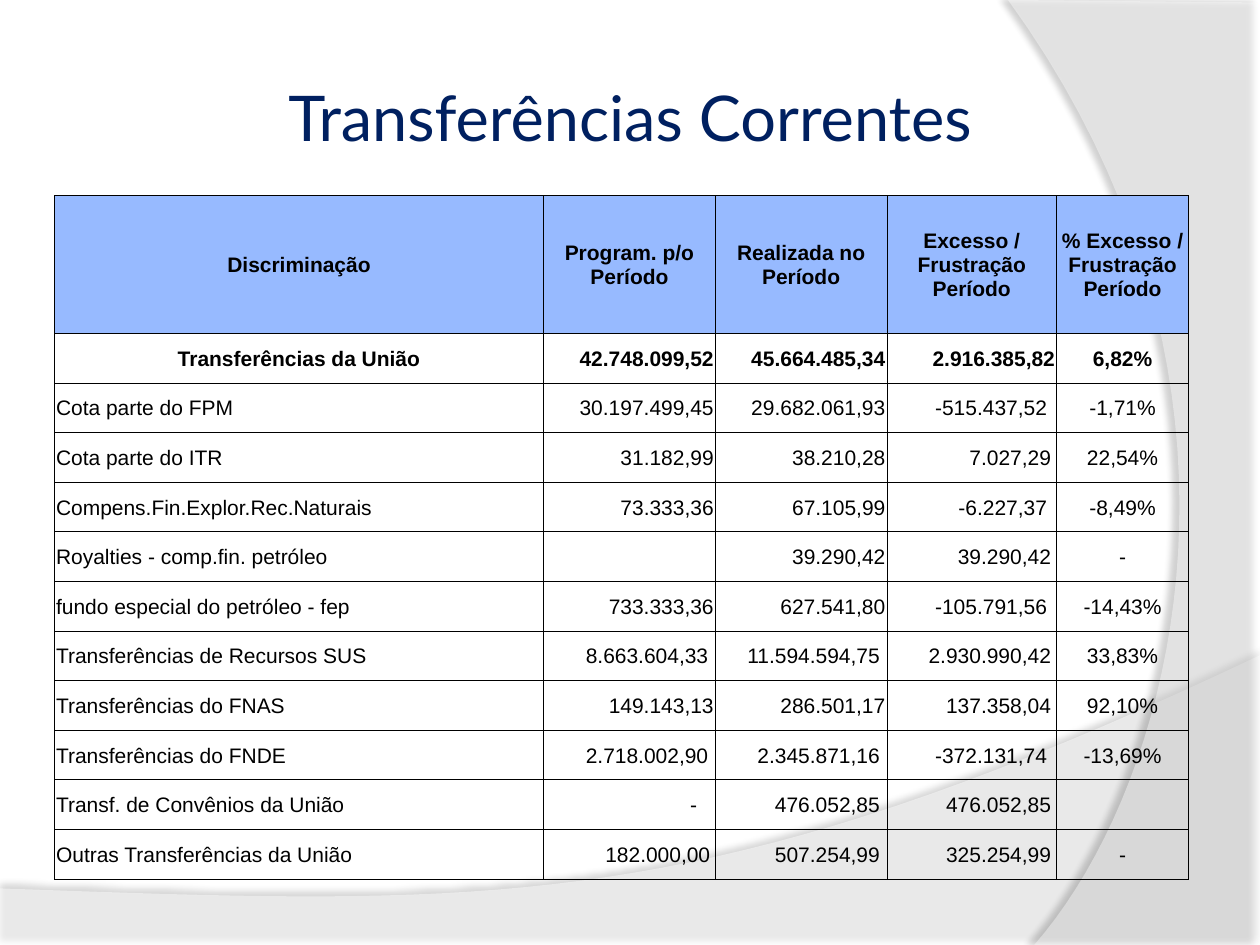
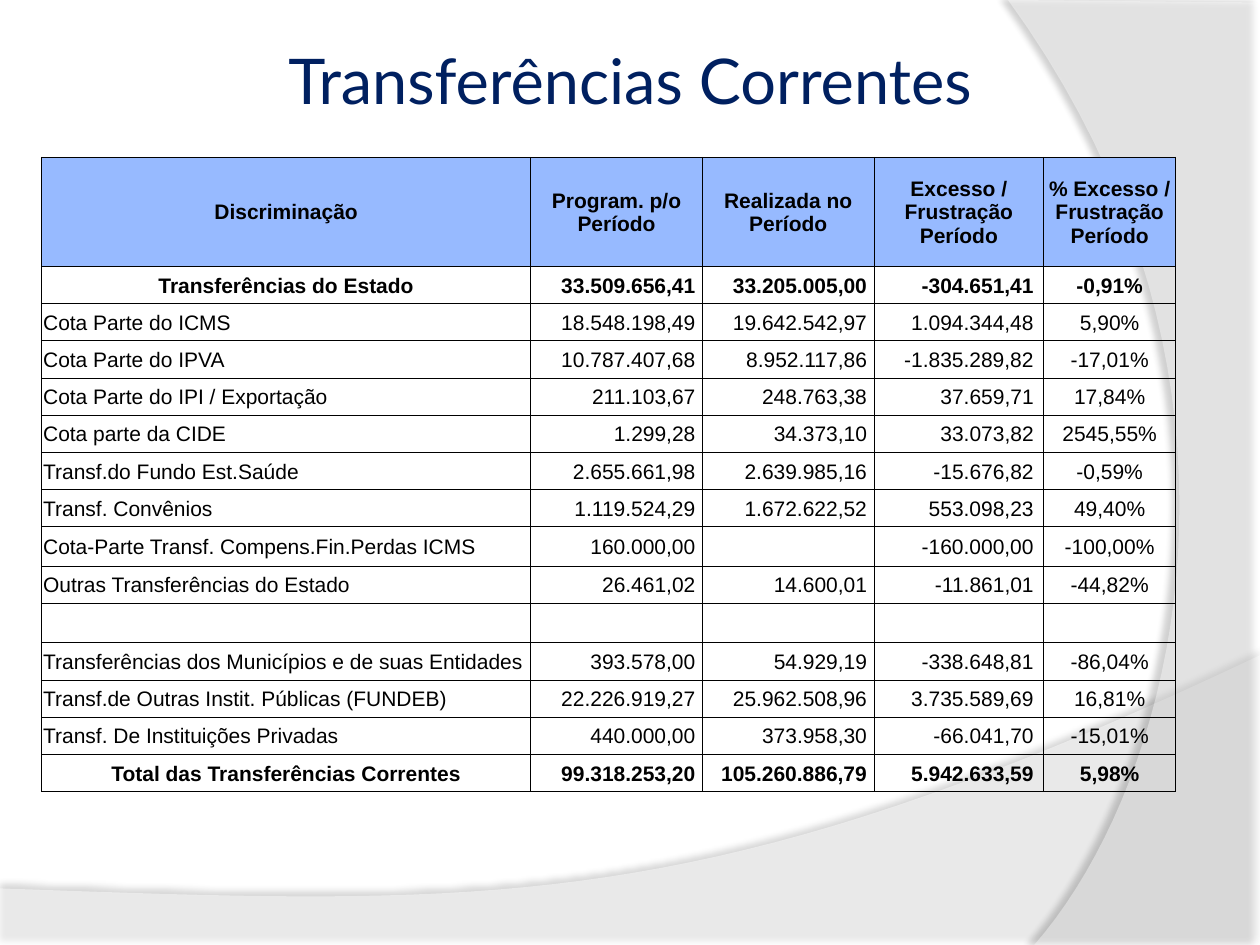
from dataclasses import dataclass

from lxml import etree
from pptx import Presentation
from pptx import util as u
from pptx.dml import color as dml
from pptx.enum import text as txt
from pptx.oxml import ns


@dataclass(frozen=True)
class Theme:
    title: str = "002060"
    ink: str = "000000"
    header: str = "97BAFF"
    paper: str = "FFFFFF"
    title_font: str = "Lato"
    table_font: str = "Arial"
    title_size: int = 36
    table_size: int = 12
    border: float = 0.5


THEME = Theme()
LEFT, CENTER, RIGHT = txt.PP_ALIGN.LEFT, txt.PP_ALIGN.CENTER, txt.PP_ALIGN.RIGHT

TITLE = "Transferências Correntes"
HEADINGS = ("Discriminação", "Program. p/o Período", "Realizada no Período",
            "Excesso / Frustração Período", "% Excesso / Frustração Período")
COLUMN_WIDTHS = (9.86, 3.46, 3.46, 3.42, 2.66)
CELL_INSET = 0.03

# Right insets (cm) of the three amount columns
FLUSH = (0.03, 0.03, 0.03)
EDGE = (0.03, 0.03, 0.11)
EDGE_NEGATIVE = (0.03, 0.03, 0.19)
PADDED = (0.14, 0.14, 0.11)
PADDED_NEGATIVE = (0.14, 0.14, 0.19)
STATE = (0.14, 0.14, 0.2)

UNION_ROWS = [
    ("Transferências da União", "42.748.099,52", "45.664.485,34", "2.916.385,82", "6,82%", FLUSH),
    ("Cota parte do FPM", "30.197.499,45", "29.682.061,93", "-515.437,52", "-1,71%", EDGE_NEGATIVE),
    ("Cota parte do ITR", "31.182,99", "38.210,28", "7.027,29", "22,54%", EDGE),
    ("Compens.Fin.Explor.Rec.Naturais", "73.333,36", "67.105,99", "-6.227,37", "-8,49%",
     EDGE_NEGATIVE),
    ("Royalties - comp.fin. petróleo", "", "39.290,42", "39.290,42", "-", EDGE),
    ("fundo especial do petróleo - fep", "733.333,36", "627.541,80", "-105.791,56", "-14,43%",
     EDGE_NEGATIVE),
    ("Transferências de Recursos SUS", "8.663.604,33", "11.594.594,75", "2.930.990,42", "33,83%",
     PADDED),
    ("Transferências do FNAS", "149.143,13", "286.501,17", "137.358,04", "92,10%", EDGE),
    ("Transferências do FNDE", "2.718.002,90", "2.345.871,16", "-372.131,74", "-13,69%",
     PADDED_NEGATIVE),
    ("Transf. de Convênios da União", "-", "476.052,85", "476.052,85", "", (0.37, 0.14, 0.11)),
    ("Outras Transferências da União", "182.000,00", "507.254,99", "325.254,99", "-",
     (0.1, 0.14, 0.11)),
]

STATE_ROWS = [row + (STATE,) for row in (
    ("Transferências do Estado", "33.509.656,41", "33.205.005,00", "-304.651,41", "-0,91%"),
    ("Cota Parte do ICMS", "18.548.198,49", "19.642.542,97", "1.094.344,48", "5,90%"),
    ("Cota Parte do IPVA", "10.787.407,68", "8.952.117,86", "-1.835.289,82", "-17,01%"),
    ("Cota Parte do IPI / Exportação", "211.103,67", "248.763,38", "37.659,71", "17,84%"),
    ("Cota parte da CIDE", "1.299,28", "34.373,10", "33.073,82", "2545,55%"),
    ("Transf.do Fundo Est.Saúde", "2.655.661,98", "2.639.985,16", "-15.676,82", "-0,59%"),
    ("Transf. Convênios", "1.119.524,29", "1.672.622,52", "553.098,23", "49,40%"),
    ("Cota-Parte Transf. Compens.Fin.Perdas ICMS", "160.000,00", "", "-160.000,00", "-100,00%"),
    ("Outras Transferências do Estado", "26.461,02", "14.600,01", "-11.861,01", "-44,82%"),
    ("", "", "", "", ""),
    ("Transferências dos Municípios e de suas Entidades", "393.578,00", "54.929,19",
     "-338.648,81", "-86,04%"),
    ("Transf.de Outras Instit. Públicas (FUNDEB)", "22.226.919,27", "25.962.508,96",
     "3.735.589,69", "16,81%"),
    ("Transf. De Instituições Privadas", "440.000,00", "373.958,30", "-66.041,70", "-15,01%"),
    ("Total das Transferências Correntes", "99.318.253,20", "105.260.886,79", "5.942.633,59",
     "5,98%"),
)]


def rgb(value):
    return dml.RGBColor.from_string(value)


def add_run(paragraph, words, font, size, color, bold=False):
    run = paragraph.add_run()
    run.text = words
    run.font.name, run.font.size, run.font.bold = font, u.Pt(size), bold
    run.font.color.rgb = rgb(color)


def add_node(parent, tag, **attributes):
    node = etree.SubElement(parent, ns.qn(tag))
    for name, value in attributes.items():
        node.set(name, str(value))
    return node


def bezier(start, control1, control2, end, steps=40):
    """Points along a cubic curve, after its start."""
    for step in range(1, steps + 1):
        t = step / steps
        weights = ((1 - t) ** 3, 3 * t * (1 - t) ** 2, 3 * t * t * (1 - t), t ** 3)
        yield tuple(sum(w * p[axis] for w, p in zip(weights, (start, control1, control2, end)))
                    for axis in (0, 1))


def add_wave(slide, left, top, corners, curve, opacity, shadow_opacity, distance, direction):
    """Translucent white sheet whose last corner runs back along a curve."""
    outline = [(u.Cm(left + x), u.Cm(top + y))
               for x, y in [*corners, *bezier(corners[-1], *curve)]]
    builder = slide.shapes.build_freeform(*outline[0], scale=1.0)
    builder.add_line_segments(outline[1:], close=True)
    wave = builder.convert_to_shape()
    wave.fill.solid()
    wave.fill.fore_color.rgb = rgb(THEME.paper)
    wave.line.fill.background()
    wave.shadow.inherit = False
    properties = wave.element.spPr
    fill_color = properties.find(ns.qn("a:solidFill"))[0]
    add_node(fill_color, "a:alpha", val=opacity * 1000)
    shadow = add_node(properties.find(ns.qn("a:effectLst")), "a:outerShdw", blurRad=u.Pt(4),
                      dist=u.Pt(distance), dir=direction * 60000, algn="ctr", rotWithShape=0)
    shadow_color = add_node(shadow, "a:srgbClr", val=THEME.ink)
    add_node(shadow_color, "a:alpha", val=shadow_opacity * 1000)


def add_background(slide):
    # Bottom wave
    add_wave(slide, 0, 13.21, [(0, 4.7), (0, 5.87), (25.4, 5.87), (25.4, 0)],
             [(14.2, 5.31), (9.93, 5.05), (0, 4.7)], 45, 35, 3.5, 270)
    # Right wave
    add_wave(slide, 20.32, 0, [(5.08, 0.05), (5.08, 19.05), (0.53, 19.05)],
             [(3.43, 15.72), (5.54, 7.62), (0, 0)], 40, 45, 4, 180)


def add_title(slide, left, top, width, height):
    title = slide.shapes.add_textbox(*map(u.Cm, (left, top, width, height)))
    frame = title.text_frame
    frame.word_wrap = True
    frame.vertical_anchor = txt.MSO_ANCHOR.MIDDLE
    frame.margin_left = frame.margin_right = u.Cm(0.13)
    frame.margin_top = frame.margin_bottom = u.Cm(0.13)
    paragraph = frame.paragraphs[0]
    paragraph.alignment = CENTER
    add_run(paragraph, TITLE, THEME.title_font, THEME.title_size, THEME.title)


def fill_cell(cell, words, align, bold=False, fill=None, right_inset=CELL_INSET):
    cell.margin_left = cell.margin_top = u.Cm(CELL_INSET)
    cell.margin_right, cell.margin_bottom = u.Cm(right_inset), 0
    cell.vertical_anchor = txt.MSO_ANCHOR.MIDDLE
    # Borders come before the fill in the cell properties
    properties = cell._tc.get_or_add_tcPr()
    for side in ("a:lnL", "a:lnR", "a:lnT", "a:lnB"):
        border = add_node(properties, side, w=u.Pt(THEME.border))
        add_node(add_node(border, "a:solidFill"), "a:srgbClr", val=THEME.ink)
    if fill:
        cell.fill.solid()
        cell.fill.fore_color.rgb = rgb(fill)
    else:
        cell.fill.background()
    paragraph = cell.text_frame.paragraphs[0]
    paragraph.alignment = align
    add_run(paragraph, words, THEME.table_font, THEME.table_size, THEME.ink, bold)


def add_transfers(slide, left, top, header_height, row_height, rows, strong_rows, label_fill=None):
    heights = [header_height] + [row_height] * len(rows)
    frame = slide.shapes.add_table(len(heights), len(COLUMN_WIDTHS), u.Cm(left), u.Cm(top),
                                   u.Cm(sum(COLUMN_WIDTHS)), u.Cm(sum(heights)))
    transfers = frame.table
    transfers.first_row = transfers.horz_banding = False
    for column, width in zip(transfers.columns, COLUMN_WIDTHS):
        column.width = u.Cm(width)
    for row, height in zip(transfers.rows, heights):
        row.height = u.Cm(height)
    # Header
    for column, heading in enumerate(HEADINGS):
        fill_cell(transfers.cell(0, column), heading, CENTER, True, THEME.header)
    # Body: label, three amounts, percentage
    for index, (label, *amounts, percent, insets) in enumerate(rows, 1):
        strong = index in strong_rows
        fill_cell(transfers.cell(index, 0), label, CENTER if strong else LEFT, strong, label_fill)
        for column, (amount, inset) in enumerate(zip(amounts, insets), 1):
            fill_cell(transfers.cell(index, column), amount, RIGHT, strong, right_inset=inset)
        fill_cell(transfers.cell(index, 4), percent, CENTER, strong)


def add_transfer_slide(deck, title_top, **transfers):
    slide = deck.slides.add_slide(deck.slide_layouts[6])
    add_background(slide)
    add_title(slide, 1.27, title_top, 22.86, 3.18)
    add_transfers(slide, **transfers)


def main():
    deck = Presentation()
    deck.slide_width, deck.slide_height = u.Cm(25.4), u.Cm(19.05)
    add_transfer_slide(deck, 0.76, left=1.1, top=3.94, header_height=2.78, row_height=1,
                       rows=UNION_ROWS, strong_rows={1})
    add_transfer_slide(deck, 0, left=0.84, top=3.17, header_height=2.2, row_height=0.75,
                       rows=STATE_ROWS, strong_rows={1, len(STATE_ROWS)},
                       label_fill=THEME.paper)
    deck.save("out.pptx")


if __name__ == "__main__":
    main()
